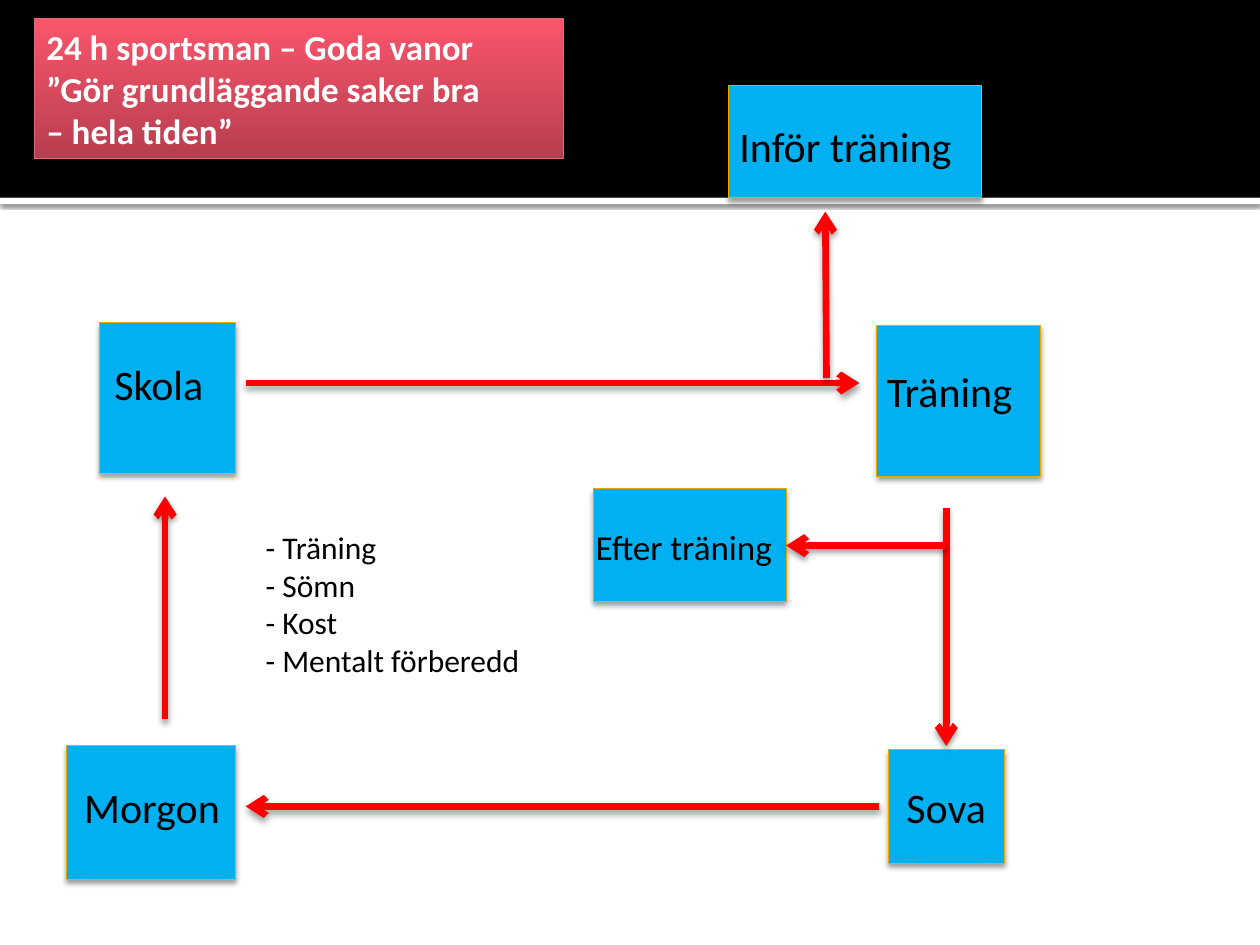
from lxml import etree
from pptx import Presentation, util as u
from pptx.dml.color import RGBColor
from pptx.enum import shapes, text
from pptx.oxml import ns

Inches, Pt = u.Inches, u.Pt


def color(value):
    return RGBColor.from_string(value)


def add_shadow(shape, opacity=38, blur=3.1, distance=2):
    """Give a shape or connector a soft shadow straight below it."""
    effects = etree.SubElement(shape._element.spPr, ns.qn("a:effectLst"))
    shadow = etree.SubElement(
        effects, ns.qn("a:outerShdw"), blurRad=str(Pt(blur)), dist=str(Pt(distance)),
        dir="5400000", algn="ctr", rotWithShape="0")
    black = etree.SubElement(shadow, ns.qn("a:srgbClr"), val="000000")
    etree.SubElement(black, ns.qn("a:alpha"), val=str(opacity * 1000))


presentation = Presentation()
presentation.slide_width, presentation.slide_height = Inches(10), Inches(7.5)
slide = presentation.slides.add_slide(presentation.slide_layouts[6])
rectangle = shapes.MSO_SHAPE.RECTANGLE

# Header band with a white edge under it
for top, height, fill in [(1.57, 0.05, "FFFFFF"), (0, 1.57, "000000")]:
    band = slide.shapes.add_shape(rectangle, 0, Inches(top), Inches(10), Inches(height))
    band.fill.solid()
    band.fill.fore_color.rgb = color(fill)
    band.line.fill.background()
    if fill == "FFFFFF":
        add_shadow(band, 60, 2.5, 0.8)
    else:
        band.shadow.inherit = False

# Boxes of the daily cycle, and the title box
places = {
    "Träning": (6.96, 2.58, 1.3, 1.2),
    "Sova": (7.05, 5.95, 0.92, 0.9),
    "Morgon": (0.53, 5.92, 1.34, 1.06),
    "Skola": (0.79, 2.56, 1.08, 1.2),
    "Inför träning": (5.78, 0.68, 2.01, 0.89),
    "Efter träning": (4.71, 3.88, 1.53, 0.89),
    "Title": (0.27, 0.15, 4.2, 1.11),
}
boxes = {}
for step, place in places.items():
    box = slide.shapes.add_shape(rectangle, *map(Inches, place))
    box.line.width = Pt(0.5)
    if step == "Title":
        box.fill.gradient()
        box.fill.gradient_angle = 90
        for stop, shade in zip(box.fill.gradient_stops, ["B73E4F", "FA556C"]):
            stop.color.rgb = color(shade)
        box.line.color.rgb = color("E46778")
    else:
        box.fill.solid()
        box.fill.fore_color.rgb = color("00B0F0")
        box.line.color.rgb = color("EBA900")
    add_shadow(box)
    boxes[step] = box

# Arrows: start x, start y, end x, end y
arrows = [
    (1.95, 3.04, 6.82, 3.04),
    (7.51, 4.03, 7.51, 5.92),
    (6.98, 6.4, 1.95, 6.4),
    (1.31, 5.71, 1.31, 3.94),
    (6.56, 3, 6.55, 1.68),
    (7.51, 4.33, 6.24, 4.33),
]
for ends in arrows:
    arrow = slide.shapes.add_connector(shapes.MSO_CONNECTOR.STRAIGHT, *map(Inches, ends))
    arrow.line.color.rgb = color("FF0000")
    arrow.line.width = Pt(3.78)
    etree.SubElement(arrow.line._get_or_add_ln(), ns.qn("a:tailEnd"), type="arrow")
    add_shadow(arrow, blur=3.5)

# Texts: a place for a text box of its own, or the box that holds the text
texts = [
    (["Träning"], (6.94, 2.85, 1.33, 0.5), 24),
    (["Sova"], boxes["Sova"], 24),
    (["Morgon"], (0.57, 6.15, 1.5, 0.5), 24),
    (["Skola"], (0.81, 2.8, 1, 0.5), 24),
    (["Inför träning"], (5.77, 0.91, 2.02, 0.5), 24),
    (["Efter träning"], (4.63, 4.12, 1.7, 0.44), 20),
    (["24 h sportsman – Goda vanor", "”Gör grundläggande saker bra", "– hela tiden”"],
     boxes["Title"], 20),
    (["- Träning", "- Sömn", "- Kost", "- Mentalt förberedd"], (2.01, 4.14, 2.44, 1.31), 18),
]
for lines, holder, size in texts:
    is_title, is_sova = holder is boxes["Title"], holder is boxes["Sova"]
    if isinstance(holder, tuple):
        holder = slide.shapes.add_textbox(*map(Inches, holder))
    frame = holder.text_frame
    frame.word_wrap = True
    frame.vertical_anchor = text.MSO_ANCHOR.MIDDLE if is_sova else text.MSO_ANCHOR.TOP
    frame.text = "\n".join(lines)
    for paragraph in frame.paragraphs:
        paragraph.alignment = text.PP_ALIGN.CENTER if is_sova else text.PP_ALIGN.LEFT
        paragraph.font.name = "Calibri"
        paragraph.font.size = Pt(size)
        paragraph.font.bold = is_title
        paragraph.font.color.rgb = color("FFFFFF" if is_title else "000000")

presentation.save("out.pptx")
